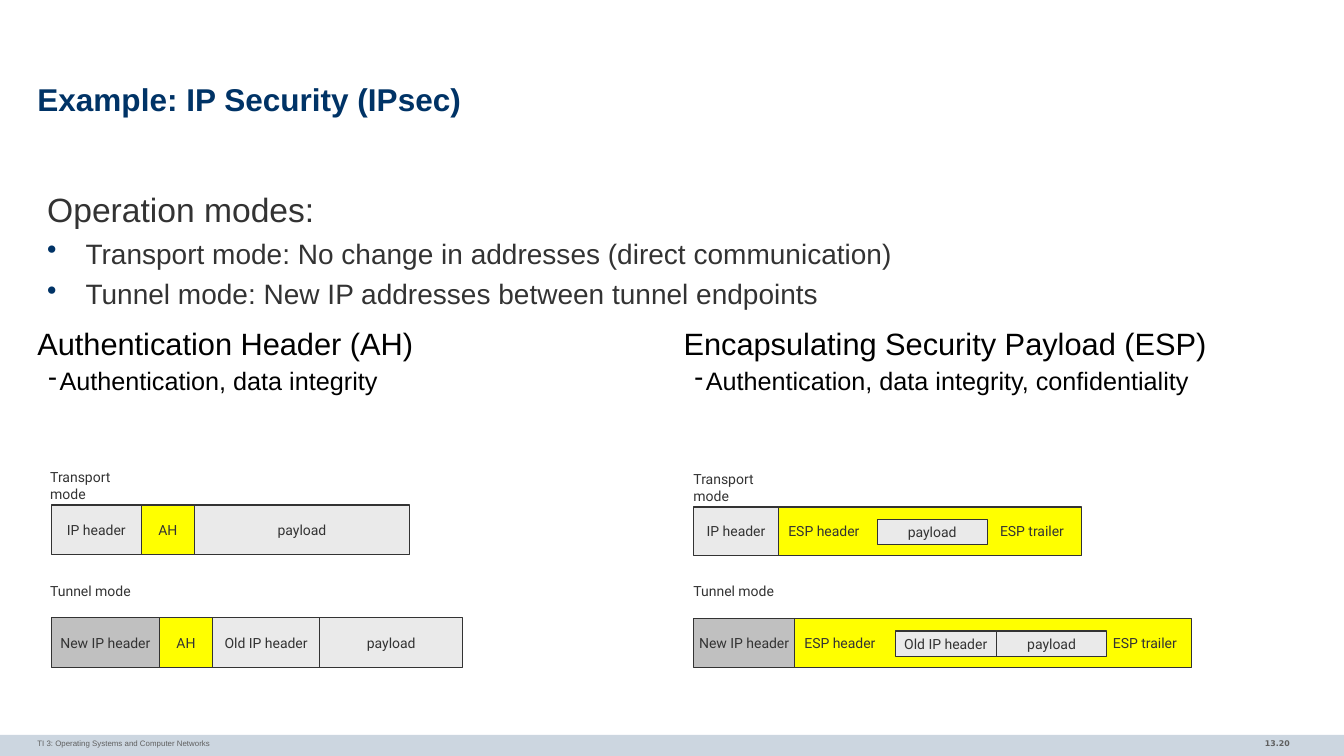
import pptx
import pptx.dml.color
import pptx.enum.shapes
import pptx.enum.text
import pptx.oxml
import pptx.util
from pptx.oxml.ns import qn

Inches, Pt = pptx.util.Inches, pptx.util.Pt
ALIGN = pptx.enum.text.PP_ALIGN
ANCHOR = pptx.enum.text.MSO_ANCHOR
RECTANGLE = pptx.enum.shapes.MSO_SHAPE.RECTANGLE

INK, NAVY, FOOTER_INK = "333333", "003366", "5F5F5F"
LIGHT, MID, YELLOW = "EAEAEA", "C0C0C0", "FFFF00"

TITLE = "Example: IP Security (IPsec)"
MODES_HEADING = "Operation modes:"
MODES = [
    "Transport mode: No change in addresses (direct communication)",
    "Tunnel mode: New IP addresses between tunnel endpoints",
]
# left, heading, detail
PROTOCOLS = [
    (0.37, "Authentication Header (AH)", "Authentication, data integrity"),
    (6.78, "Encapsulating Security Payload (ESP)",
     "Authentication, data integrity, confidentiality"),
]
# text, left, top, width
LABELS = [
    ("Transport mode", 0.4, 4.6, 0.9),
    ("Tunnel mode", 0.4, 5.73, 1.2),
    ("Transport mode", 6.78, 4.62, 0.9),
    ("Tunnel mode", 6.78, 5.73, 1.2),
]
# left, top, height, fields as (text, width, fill[, tab position])
PACKETS = [
    (0.51, 5.01, 0.49, [("IP header", 0.89, LIGHT), ("AH", 0.53, YELLOW),
                        ("payload", 2.13, LIGHT)]),
    (0.51, 6.13, 0.49, [("New IP header", 1.07, MID), ("AH", 0.53, YELLOW),
                        ("Old IP header", 1.06, LIGHT), ("payload", 1.42, LIGHT)]),
    (6.88, 5.03, 0.48, [("IP header", 0.84, LIGHT),
                        ("ESP header\tESP trailer", 3.01, YELLOW, 2.1)]),
    (8.7, 5.15, 0.25, [("payload", 1.09, LIGHT)]),
    (6.88, 6.14, 0.48, [("New IP header", 1.0, MID),
                        ("ESP header\tESP trailer", 3.94, YELLOW, 3.06)]),
    (8.88, 6.26, 0.25, [("Old IP header", 1.0, LIGHT), ("payload", 1.1, LIGHT)]),
]


def color(value):
    return pptx.dml.color.RGBColor.from_string(value)


def add_bullet(para, mark, mark_color, left, hanging):
    properties = para._p.get_or_add_pPr()
    properties.set("marL", str(Inches(left)))
    properties.set("indent", str(-Inches(hanging)))
    bullet_color = pptx.oxml.parse_xml(
        '<a:buClr xmlns:a="http://schemas.openxmlformats.org/drawingml/2006/main">'
        f'<a:srgbClr val="{mark_color}"/></a:buClr>')
    properties.append(bullet_color)
    bullet = properties.makeelement(qn("a:buChar"), {"char": mark})
    properties.append(bullet)


def add_tab(para, position):
    properties = para._p.get_or_add_pPr()
    stops = properties.makeelement(qn("a:tabLst"), {})
    stops.append(stops.makeelement(qn("a:tab"), {"pos": str(Inches(position)), "algn": "l"}))
    properties.append(stops)


def write(frame, text, size, font="Arial", ink=INK, bold=False, align=ALIGN.LEFT,
          before=0, spacing=None, bullet=None, tab=None):
    """Fill the empty first paragraph, or append one, and format it."""
    para = frame.paragraphs[0]
    if para.runs:
        para = frame.add_paragraph()
    para.alignment = align
    para.space_before = Pt(before)
    if spacing:
        para.line_spacing = spacing
    if bullet:
        add_bullet(para, *bullet)
    if tab:
        add_tab(para, tab)
    span = para.add_run()
    span.text = text
    span.font.name, span.font.size, span.font.bold = font, Pt(size), bold
    span.font.color.rgb = color(ink)


def set_margins(frame, side, end):
    frame.margin_left = frame.margin_right = Inches(side)
    frame.margin_top = frame.margin_bottom = Inches(end)


def add_text_box(page, left, top, width, height, side=0.1, end=0.05):
    box = page.shapes.add_textbox(*map(Inches, (left, top, width, height)))
    box.text_frame.word_wrap = True
    set_margins(box.text_frame, side, end)
    return box.text_frame


def add_box(page, left, top, width, height, fill, line=None):
    box = page.shapes.add_shape(RECTANGLE, *map(Inches, (left, top, width, height)))
    box.shadow.inherit = False
    box.fill.solid()
    box.fill.fore_color.rgb = color(fill)
    if line:
        box.line.color.rgb = color(line)
        box.line.width = Pt(0.75)
    else:
        box.line.fill.background()
    return box.text_frame


def add_packet(page, left, top, height, fields):
    for text, width, fill, *tab in fields:
        frame = add_box(page, left, top, width, height, fill, INK)
        frame.vertical_anchor = ANCHOR.MIDDLE
        frame.word_wrap = bool(tab)
        set_margins(frame, 0.1 if tab else 0, 0)
        write(frame, text, 10, "Roboto", align=ALIGN.LEFT if tab else ALIGN.CENTER,
              tab=tab[0] if tab else None)
        left += width


def main():
    deck = pptx.Presentation()
    deck.slide_width, deck.slide_height = Inches(13.33), Inches(7.5)
    page = deck.slides.add_slide(deck.slide_layouts[5])

    title = page.shapes.title
    title.left, title.top, title.width, title.height = map(Inches, (0.37, 0.78, 12.6, 0.47))
    title.text_frame.vertical_anchor = ANCHOR.MIDDLE
    set_margins(title.text_frame, 0, 0)
    write(title.text_frame, TITLE, 22.5, ink=NAVY, bold=True, spacing=0.85)

    add_box(page, 0, 7.29, 13.33, 0.21, "CCD6E0")
    footer = add_text_box(page, 0.37, 7.28, 8.72, 0.22, side=0)
    write(footer, "TI 3: Operating Systems and Computer Networks", 5.6, ink=FOOTER_INK)
    number = add_text_box(page, 11.1, 7.28, 1.79, 0.22)
    write(number, "13.20", 5.6, "DejaVu Sans", FOOTER_INK, bold=True, align=ALIGN.RIGHT)

    modes = add_text_box(page, 0.37, 1.83, 11.1, 1.23)
    write(modes, MODES_HEADING, 24)
    for mode in MODES:
        write(modes, mode, 20, before=4.8, bullet=("•", NAVY, 0.38, 0.38))

    for left, heading, detail in PROTOCOLS:
        frame = add_text_box(page, left, 3.21, 6.19, 0.75, side=0, end=0)
        write(frame, heading, 22, ink="000000", spacing=1.02)
        write(frame, detail, 18, ink="000000", spacing=1.02, before=2.8,
              bullet=("-", "000000", 0.22, 0.11))

    for text, left, top, width in LABELS:
        write(add_text_box(page, left, top, width, 0.27), text, 10, "Roboto")
    for packet in PACKETS:
        add_packet(page, *packet)

    deck.save("out.pptx")


if __name__ == "__main__":
    main()
